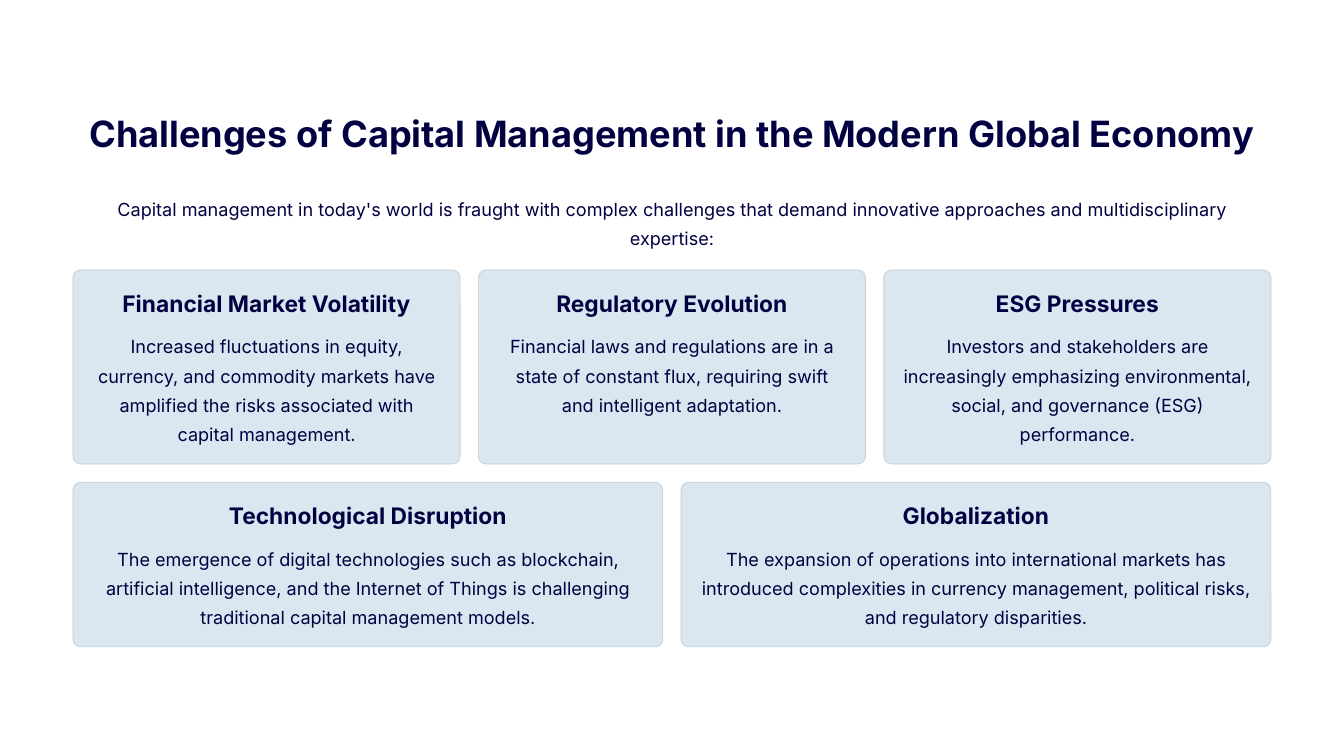
"""Build the slide on challenges of capital management."""
import pptx
import pptx.dml.color
import pptx.enum.shapes
import pptx.enum.text
import pptx.util

Pt = pptx.util.Pt
NAVY = pptx.dml.color.RGBColor(0x01, 0x01, 0x41)
CARD_FILL = pptx.dml.color.RGBColor(0xDB, 0xE7, 0xF0)
CARD_LINE = pptx.dml.color.RGBColor(0xC1, 0xCD, 0xD6)
WHITE = pptx.dml.color.RGBColor(0xFF, 0xFF, 0xFF)

LEFT = 62.6
CONTENT_WIDTH = 1026.8
GAP = 15.6
PADDING = 16.2
CORNER_RADIUS = 6.5
LINE_SPACING = 25

ROWS = [
    (231.4, 166.3, [
        ("Financial Market Volatility", 4,
         "Increased fluctuations in equity, currency, and commodity markets have "
         "amplified the risks associated with capital management."),
        ("Regulatory Evolution", 3,
         "Financial laws and regulations are in a state of constant flux, "
         "requiring swift and intelligent adaptation."),
        ("ESG Pressures", 4,
         "Investors and stakeholders are increasingly emphasizing environmental, "
         "social, and governance (ESG) performance."),
    ]),
    (413.4, 141.1, [
        ("Technological Disruption", 3,
         "The emergence of digital technologies such as blockchain, artificial "
         "intelligence, and the Internet of Things is challenging traditional "
         "capital management models."),
        ("Globalization", 3,
         "The expansion of operations into international markets has introduced "
         "complexities in currency management, political risks, and regulatory "
         "disparities."),
    ]),
]

presentation = pptx.Presentation()
presentation.slide_width = Pt(1152)
presentation.slide_height = Pt(648)
slide = presentation.slides.add_slide(presentation.slide_layouts[6])
slide.background.fill.solid()
slide.background.fill.fore_color.rgb = WHITE


def add_text(text, left, top, width, height, size, spacing, bold=False):
    frame = slide.shapes.add_textbox(Pt(left), Pt(top), Pt(width), Pt(height)).text_frame
    frame.margin_left = frame.margin_top = frame.margin_right = frame.margin_bottom = 0
    frame.word_wrap = not bold
    paragraph = frame.paragraphs[0]
    paragraph.text = text
    paragraph.alignment = pptx.enum.text.PP_ALIGN.CENTER
    paragraph.line_spacing = Pt(spacing)
    paragraph.font.name = "Inter"
    paragraph.font.size = Pt(size)
    paragraph.font.bold = bold
    paragraph.font.color.rgb = NAVY


add_text("Challenges of Capital Management in the Modern Global Economy",
         72, 93.6, 1007.3, 39, 31, 39, bold=True)
add_text("Capital management in today's world is fraught with complex challenges that demand "
         "innovative approaches and multidisciplinary expertise:",
         LEFT, 163.8, CONTENT_WIDTH, 2 * LINE_SPACING, 15.5, LINE_SPACING)

for top, height, cards in ROWS:
    width = (CONTENT_WIDTH - GAP * (len(cards) - 1)) / len(cards)
    text_width = width - 2 * PADDING
    for column, (heading, line_count, body) in enumerate(cards):
        left = LEFT + column * (width + GAP)
        card = slide.shapes.add_shape(
            pptx.enum.shapes.MSO_SHAPE.ROUNDED_RECTANGLE, Pt(left), Pt(top), Pt(width), Pt(height))
        card.adjustments[0] = CORNER_RADIUS / height
        card.shadow.inherit = False
        card.fill.solid()
        card.fill.fore_color.rgb = CARD_FILL
        card.line.color.rgb = CARD_LINE
        card.line.width = Pt(0.6)
        add_text(heading, left + PADDING, top + PADDING, text_width, 24.5, 19.5, 24, bold=True)
        add_text(body, left + PADDING, top + 50.1, text_width,
                 line_count * LINE_SPACING, 15.5, LINE_SPACING)

presentation.save("out.pptx")
